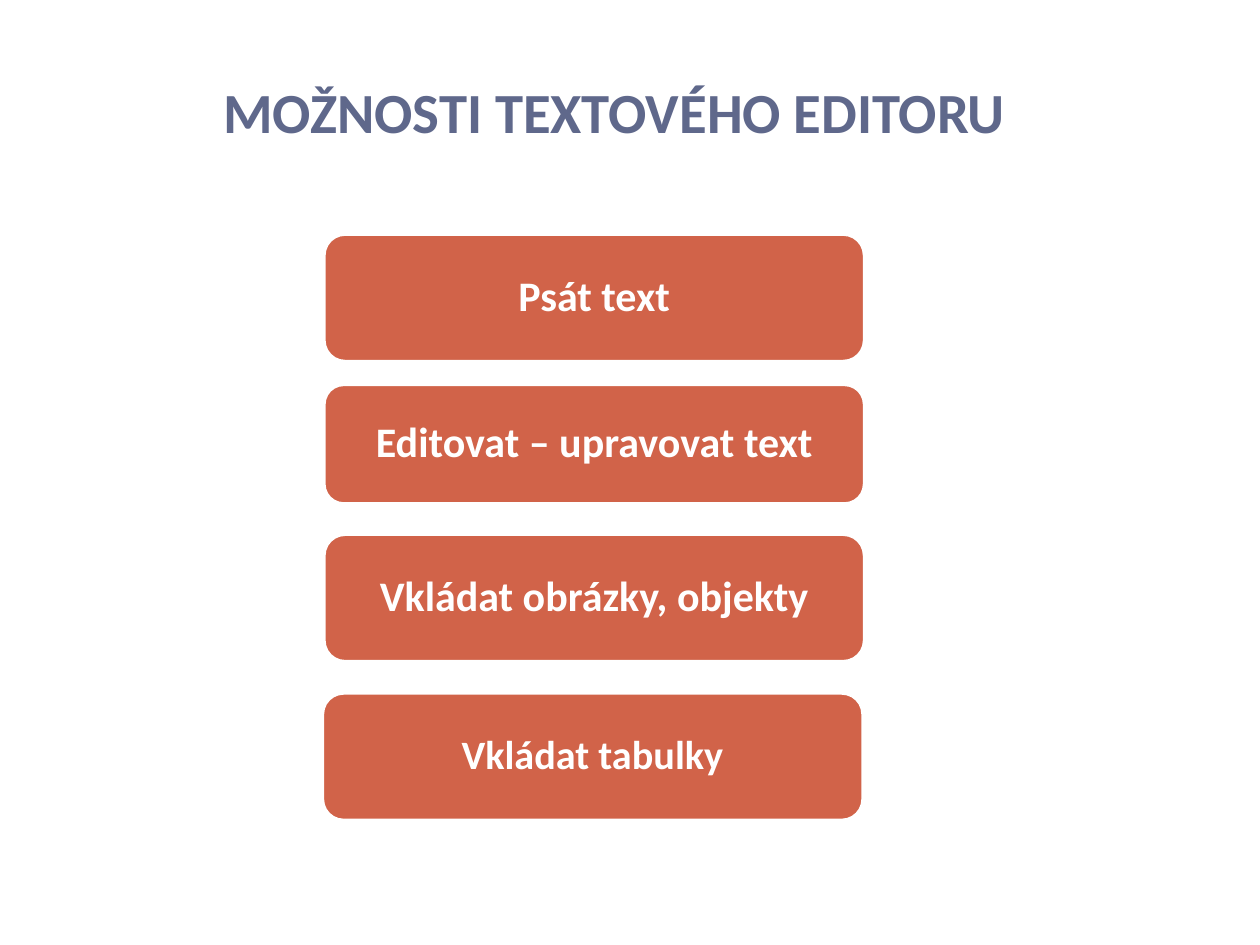
from dataclasses import dataclass

from pptx import Presentation
from pptx.dml.color import RGBColor
from pptx.enum.shapes import MSO_SHAPE as Preset
from pptx.enum.text import MSO_ANCHOR as Anchor, MSO_AUTO_SIZE as AutoSize, PP_ALIGN as Align
from pptx.slide import Slide
from pptx.text.text import TextFrame
from pptx.util import Cm, Pt

TITLE_COLOR = "5F688B"
BOX_COLOR = "D16349"
WHITE = "FFFFFF"
BOX_WIDTH = 10.9
BOX_FRAME = {
    "word_wrap": True,
    "vertical_anchor": Anchor.MIDDLE,
    "margin_left": Cm(0.36),
    "margin_right": Cm(0.36),
    "margin_top": Cm(0.25),
    "margin_bottom": Cm(0.25),
}
TITLE_FRAME = {"auto_size": AutoSize.NONE, "word_wrap": True, "vertical_anchor": Anchor.BOTTOM}


@dataclass
class OptionBox:
    text: str
    top: float
    left: float = 6.53
    height: float = 2.57
    size: float = 24


OPTIONS = [
    OptionBox("Psát text", 4.72),
    OptionBox("Editovat – upravovat text", 7.75, height=2.41),
    OptionBox("Vkládat obrázky, objekty", 10.77),
    OptionBox("Vkládat tabulky", 13.97, left=6.5, size=23),
]


def color(value: str) -> RGBColor:
    return RGBColor.from_string(value)


def apply_format(target: object, values: dict) -> None:
    for name, value in values.items():
        setattr(target, name, value)


def write_text(frame: TextFrame, text: str, size: float, text_color: str,
               frame_format: dict, line_spacing: float) -> None:
    apply_format(frame, frame_format)
    paragraph = frame.paragraphs[0]
    apply_format(paragraph, {"alignment": Align.CENTER, "line_spacing": line_spacing})
    run = paragraph.add_run()
    run.text = text
    apply_format(run.font, {"name": "Calibri", "size": Pt(size), "bold": True})
    run.font.color.rgb = color(text_color)


def draw_title(slide: Slide) -> None:
    title = slide.shapes.title
    apply_format(title, {"left": Cm(0.61), "top": Cm(1.32), "width": Cm(23.8), "height": Cm(1.73)})
    write_text(title.text_frame, "MOŽNOSTI TEXTOVÉHO EDITORU ", 32.4, TITLE_COLOR, TITLE_FRAME, 1.0)


def draw_option(slide: Slide, option: OptionBox) -> None:
    shape = slide.shapes.add_shape(
        Preset.ROUNDED_RECTANGLE,
        Cm(option.left), Cm(option.top), Cm(BOX_WIDTH), Cm(option.height),
    )
    shape.shadow.inherit = False
    shape.fill.solid()
    shape.fill.fore_color.rgb = color(BOX_COLOR)
    shape.line.color.rgb = color(WHITE)
    shape.line.width = Pt(2)
    write_text(shape.text_frame, option.text, option.size, WHITE, BOX_FRAME, 0.9)


def main() -> None:
    presentation = Presentation()
    apply_format(presentation, {"slide_width": Cm(25.4), "slide_height": Cm(19.05)})
    slide = presentation.slides.add_slide(presentation.slide_layouts[5])
    draw_title(slide)
    for option in OPTIONS:
        draw_option(slide, option)
    presentation.save("out.pptx")


if __name__ == "__main__":
    main()
